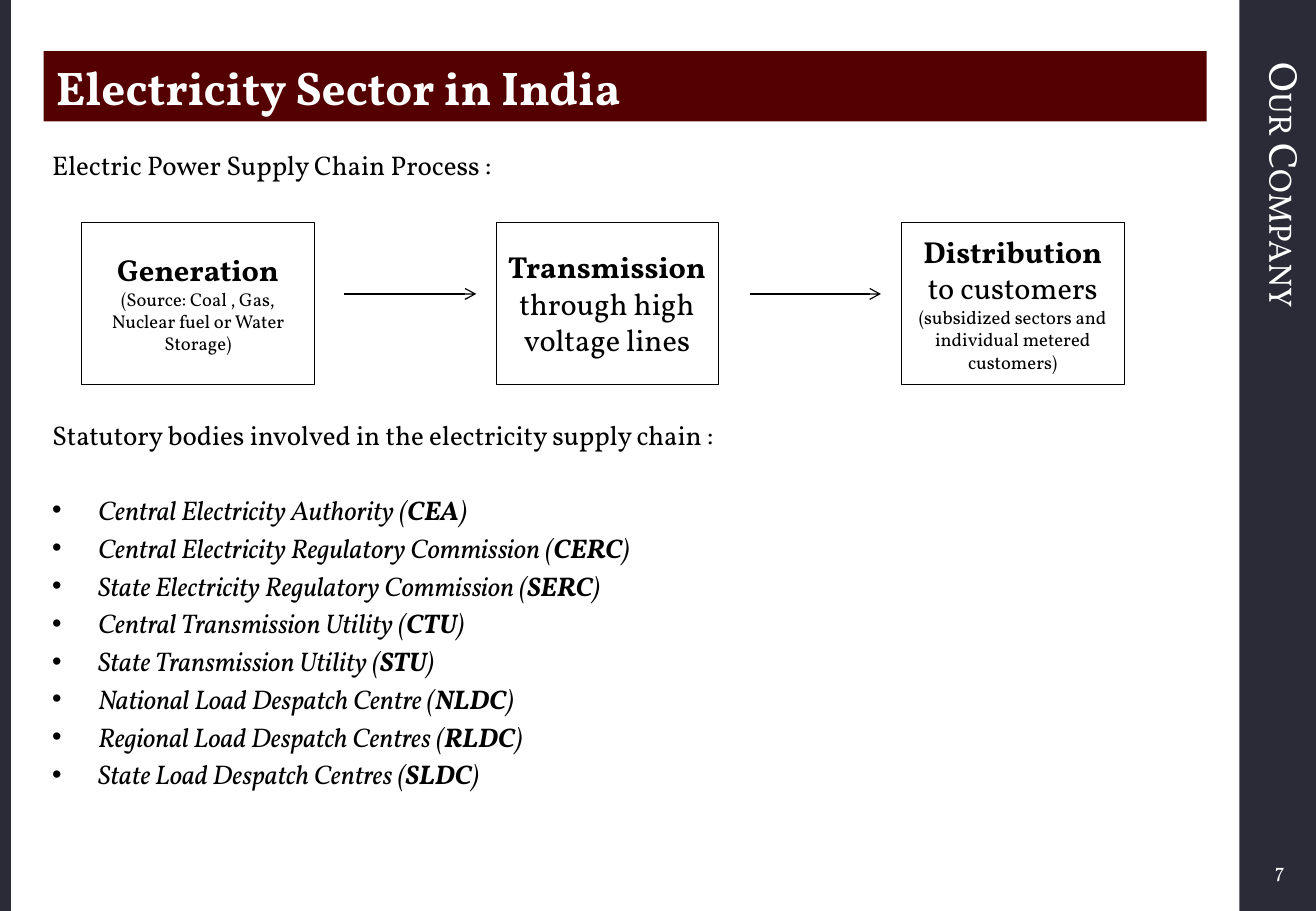
from lxml import etree
from pptx import Presentation
from pptx.dml.color import RGBColor
from pptx.enum.shapes import MSO_CONNECTOR, MSO_SHAPE
from pptx.enum.text import MSO_ANCHOR, PP_ALIGN
from pptx.oxml.ns import qn
from pptx.util import Inches, Pt

NAVY = RGBColor(0x2B, 0x2B, 0x37)
MAROON = RGBColor(0x54, 0x00, 0x00)
WHITE = RGBColor(0xFF, 0xFF, 0xFF)
BLACK = RGBColor(0x00, 0x00, 0x00)


def add_run(paragraph, text, size, color=BLACK, **formats):
    run = paragraph.add_run()
    run.text = text
    run.font.color.rgb = color
    values = {"name": "Vollkorn", "size": Pt(size), **formats}
    for name, value in values.items():
        setattr(run.font, name, value)
    return run


def add_text_box(slide, left, top, width, height):
    box = slide.shapes.add_textbox(
        Inches(left), Inches(top), Inches(width), Inches(height))
    box.text_frame.word_wrap = True
    return box.text_frame


presentation = Presentation()
presentation.slide_width = Inches(10.83)
presentation.slide_height = Inches(7.5)
slide = presentation.slides.add_slide(presentation.slide_layouts[5])

# Side bands
for left, width in [(10.2, 0.63), (0, 0.09)]:
    band = slide.shapes.add_shape(
        MSO_SHAPE.RECTANGLE, Inches(left), 0, Inches(width), Inches(7.5))
    band.shadow.inherit = False
    band.fill.solid()
    band.fill.fore_color.rgb = NAVY
    band.line.fill.background()

# Vertical name on the right band
frame = add_text_box(slide, 10.2, 0.42, 0.63, 6.42)
frame._txBody.find(qn("a:bodyPr")).set("vert", "vert")
run = add_run(frame.paragraphs[0], "Our Company", 24, WHITE)
run.font._element.set("cap", "small")

# Title bar
title = slide.shapes.title
title.left, title.top = Inches(0.36), Inches(0.42)
title.width, title.height = Inches(9.57), Inches(0.58)
title.fill.solid()
title.fill.fore_color.rgb = MAROON
title.text_frame.vertical_anchor = MSO_ANCHOR.MIDDLE
paragraph = title.text_frame.paragraphs[0]
paragraph.alignment = PP_ALIGN.LEFT
add_run(paragraph, "Electricity Sector in India", 28, WHITE, bold=True)

# Supply chain heading
frame = add_text_box(slide, 0.33, 1.17, 9.57, 0.4)
add_run(frame.paragraphs[0], "Electric Power Supply Chain Process :", 16)

# Supply chain stages: left, width, lines of (text, size, bold)
stages = [
    (0.67, 1.92, [("Generation", 18, True),
                  ("(Source: Coal , Gas, Nuclear fuel or Water Storage)", 11, False)]),
    (4.08, 1.83, [("Transmission", 18, True),
                  ("through high voltage lines", 18, False)]),
    (7.42, 1.83, [("Distribution", 18, True),
                  ("to customers", 18, False),
                  ("(subsidized sectors and individual metered customers)", 11, False)]),
]
for left, width, lines in stages:
    stage = slide.shapes.add_shape(
        MSO_SHAPE.RECTANGLE, Inches(left), Inches(1.83), Inches(width), Inches(1.33))
    stage.shadow.inherit = False
    stage.fill.background()
    stage.line.color.rgb = BLACK
    stage.line.width = Pt(0.25)
    frame = stage.text_frame
    frame.word_wrap = True
    frame.vertical_anchor = MSO_ANCHOR.MIDDLE
    for index, (text, size, bold) in enumerate(lines):
        paragraph = frame.add_paragraph() if index else frame.paragraphs[0]
        paragraph.alignment = PP_ALIGN.CENTER
        add_run(paragraph, text, size, bold=bold)

# Arrows between the stages
for start, end in [(2.83, 3.92), (6.17, 7.25)]:
    arrow = slide.shapes.add_connector(
        MSO_CONNECTOR.STRAIGHT, Inches(start), Inches(2.42), Inches(end), Inches(2.42))
    arrow.line.color.rgb = BLACK
    arrow.line.width = Pt(0.75)
    etree.SubElement(arrow.line._get_or_add_ln(), qn("a:tailEnd"), type="arrow")
    etree.SubElement(arrow._element.spPr, qn("a:effectLst"))

# Statutory bodies
bodies = [
    ("Central Electricity Authority", "CEA"),
    ("Central Electricity Regulatory Commission", "CERC"),
    ("State Electricity Regulatory Commission", "SERC"),
    ("Central Transmission Utility", "CTU"),
    ("State Transmission Utility", "STU"),
    ("National Load Despatch Centre", "NLDC"),
    ("Regional Load Despatch Centres", "RLDC"),
    ("State Load Despatch Centres", "SLDC"),
]
frame = add_text_box(slide, 0.33, 3.4, 9.57, 3.35)
add_run(frame.paragraphs[0],
        "Statutory bodies involved in the electricity supply chain :", 16)
for index, (body, acronym) in enumerate(bodies):
    paragraph = frame.add_paragraph()
    paragraph.space_before = Pt(3.2 if index else 25)
    properties = paragraph._p.get_or_add_pPr()
    properties.set("marL", str(Inches(0.38)))
    properties.set("indent", str(-Inches(0.38)))
    etree.SubElement(properties, qn("a:buFont"), typeface="Arial")
    etree.SubElement(properties, qn("a:buChar"), char="•")
    for text, bold in [(f"{body} (", False), (acronym, True), (")", False)]:
        add_run(paragraph, text, 16, italic=True, bold=bold)

# Page number
frame = add_text_box(slide, 9.5, 7, 1.17, 0.33)
frame.vertical_anchor = MSO_ANCHOR.MIDDLE
frame.paragraphs[0].alignment = PP_ALIGN.RIGHT
add_run(frame.paragraphs[0], "7", 12, WHITE)

presentation.save("out.pptx")
